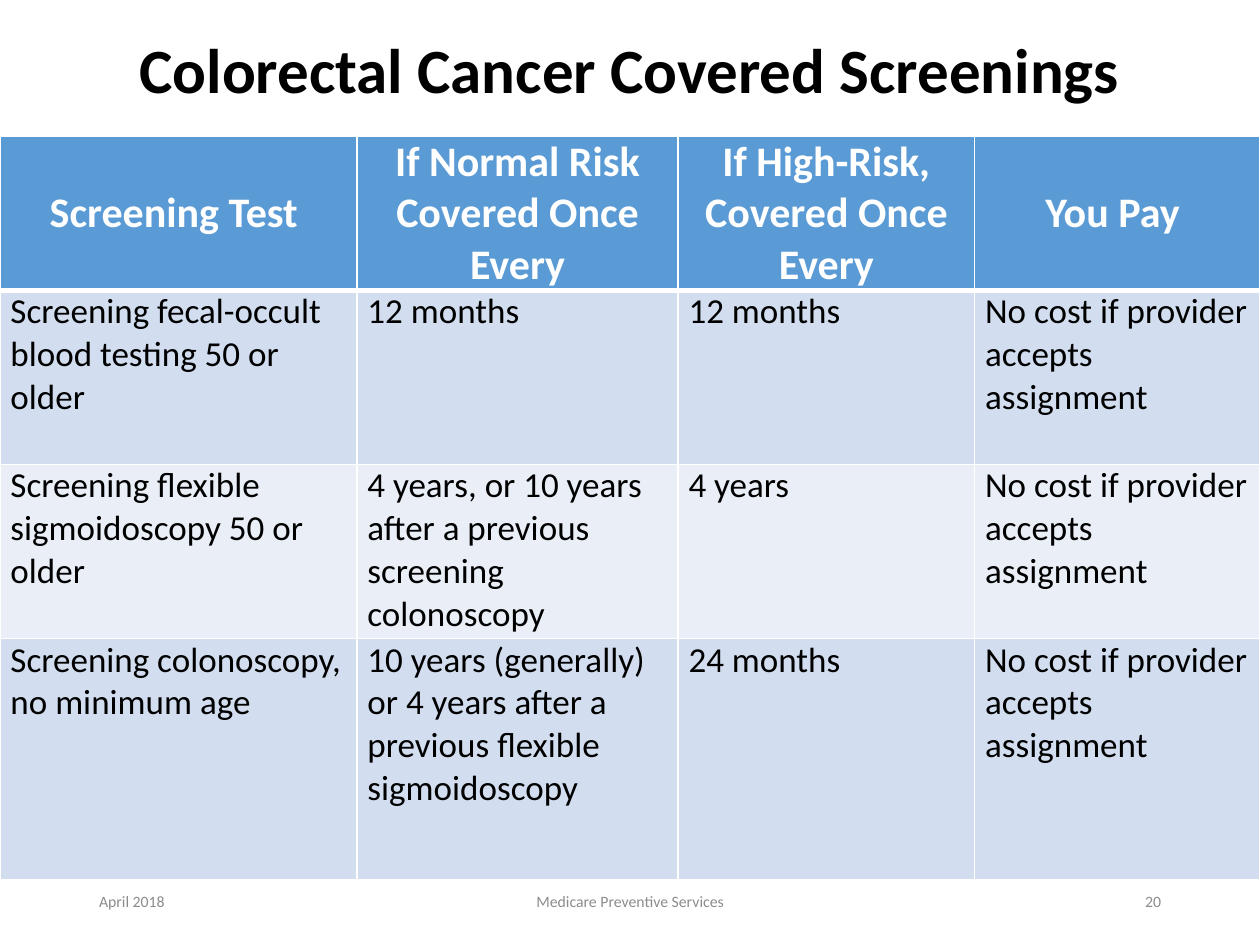
"""Build a slide with a table of covered colorectal cancer screenings."""
from dataclasses import dataclass

from lxml import etree
from pptx import Presentation
from pptx.dml.color import RGBColor
from pptx.enum import text
from pptx.oxml.ns import qn
from pptx.util import Pt


@dataclass(frozen=True)
class Theme:
    """Colours, font and type sizes of the slide."""

    font: str = "Calibri"
    ink: str = "000000"
    white: str = "FFFFFF"
    muted: str = "8C8C8C"
    header: str = "5B9BD5"
    bands: tuple = ("D2DEEF", "EAEFF7")
    title_size: int = 36
    header_size: int = 24
    body_size: int = 20
    footer_size: int = 9


THEME = Theme()
ALIGN = text.PP_ALIGN
MIDDLE = text.MSO_ANCHOR.MIDDLE
COLUMNS = (204, 183.5, 169.5, 163)
ROW_HEIGHTS = (88, 99.5, 99.5, 137.5)
NO_COST = "No cost if provider accepts assignment"
ROWS = (
    ("Screening Test ", "If Normal Risk\nCovered Once Every",
     "If High-Risk,\nCovered Once Every", "You Pay "),
    ("Screening fecal-occult blood testing 50 or older",
     "12 months", "12 months", NO_COST),
    ("Screening flexible sigmoidoscopy 50 or older",
     "4 years, or 10 years after a previous screening colonoscopy",
     "4 years", NO_COST),
    ("Screening colonoscopy, no minimum age",
     "10 years (generally) or 4 years after a previous flexible sigmoidoscopy",
     "24 months", NO_COST),
)
FOOTERS = (
    ("April 2018", 49.5, 162, ALIGN.LEFT),
    ("Medicare Preventive Services", 238.5, 243, ALIGN.CENTER),
    ("20", 508.5, 162, ALIGN.RIGHT),
)


def write(tf, content, size, color, align, bold=False):
    """Fill the first paragraph with runs, one for each line."""
    p = tf.paragraphs[0]
    p.alignment = align
    for i, line in enumerate(content.split("\n")):
        if i:
            p.add_line_break()
        r = p.add_run()
        r.text = line
        r.font.name = THEME.font
        r.font.size = Pt(size)
        r.font.bold = bold
        r.font.color.rgb = RGBColor.from_string(color)
    return p


def add_title(s, content):
    """Place and write the slide title."""
    sp = s.shapes.title
    sp.left, sp.top, sp.width, sp.height = Pt(19.5), Pt(0), Pt(680.5), Pt(83)
    tf = sp.text_frame
    tf.word_wrap = True
    tf.auto_size = text.MSO_AUTO_SIZE.NONE
    tf.vertical_anchor = MIDDLE
    p = write(tf, content, THEME.title_size, THEME.ink, ALIGN.CENTER, True)
    p.line_spacing = 0.9


def set_borders(cell, top, bottom):
    """Draw white cell borders with the given top and bottom widths."""
    tcPr = cell._tc.get_or_add_tcPr()
    for i, (side, width) in enumerate(zip("LRTB", (1, 1, top, bottom))):
        ln = etree.Element(qn(f"a:ln{side}"), w=str(Pt(width)))
        fill = etree.SubElement(ln, qn("a:solidFill"))
        etree.SubElement(fill, qn("a:srgbClr"), val=THEME.white)
        tcPr.insert(i, ln)


def format_cell(cell, content, row):
    """Write and style one cell according to its row."""
    is_header = row == 0
    cell.margin_left = cell.margin_right = Pt(2)
    cell.margin_top = cell.margin_bottom = Pt(0)
    cell.fill.solid()
    fill = THEME.header if is_header else THEME.bands[(row - 1) % 2]
    cell.fill.fore_color.rgb = RGBColor.from_string(fill)
    if is_header:
        cell.vertical_anchor = MIDDLE
        write(cell.text_frame, content, THEME.header_size, THEME.white,
              ALIGN.CENTER, True)
    else:
        p = write(cell.text_frame, content, THEME.body_size, THEME.ink, ALIGN.LEFT)
        pPr = p._p.get_or_add_pPr()
        pPr.set("marL", str(Pt(4)))
        pPr.set("indent", "0")
    set_borders(cell, 3 if row == 1 else 1, 3 if is_header else 1)


def add_screening_table(s):
    """Add the table of screenings, intervals and costs."""
    table = s.shapes.add_table(len(ROWS), len(COLUMNS), Pt(0), Pt(78),
                               Pt(sum(COLUMNS)), Pt(sum(ROW_HEIGHTS))).table
    for column, width in zip(table.columns, COLUMNS):
        column.width = Pt(width)
    for i, (height, contents) in enumerate(zip(ROW_HEIGHTS, ROWS)):
        table.rows[i].height = Pt(height)
        for j, content in enumerate(contents):
            format_cell(table.cell(i, j), content, i)


def add_footer(s, content, left, width, align):
    """Add one footer text box."""
    tf = s.shapes.add_textbox(Pt(left), Pt(500.5), Pt(width), Pt(29)).text_frame
    tf.word_wrap = True
    tf.vertical_anchor = MIDDLE
    write(tf, content, THEME.footer_size, THEME.muted, align)


def main():
    """Build and save the presentation."""
    prs = Presentation()
    prs.slide_width, prs.slide_height = Pt(720), Pt(540)
    s = prs.slides.add_slide(prs.slide_layouts[5])
    add_title(s, "Colorectal Cancer Covered Screenings")
    add_screening_table(s)
    for footer in FOOTERS:
        add_footer(s, *footer)
    prs.save("out.pptx")


if __name__ == "__main__":
    main()
